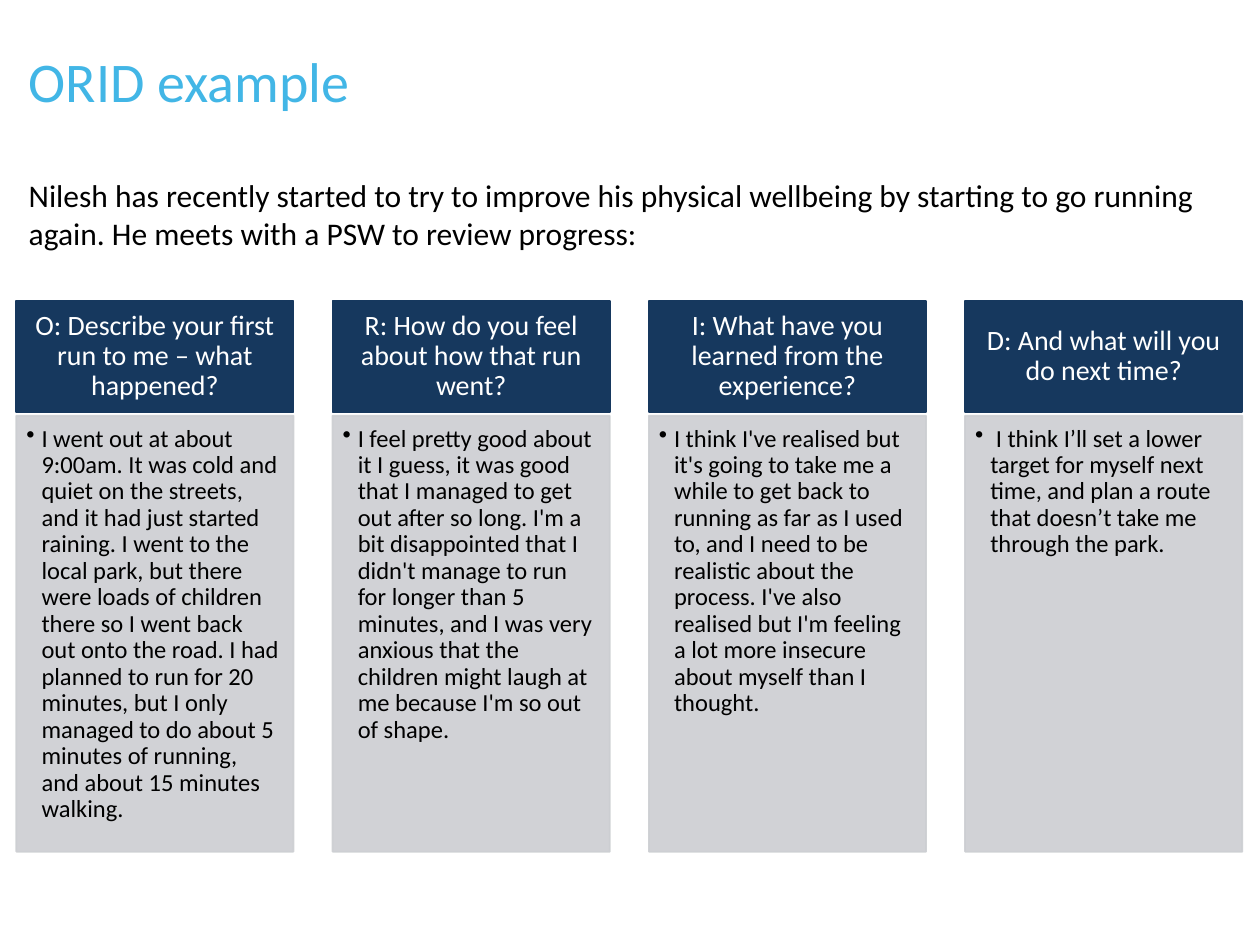
from lxml.etree import SubElement
from pptx import Presentation
from pptx.dml.color import RGBColor
from pptx.enum.shapes import MSO_SHAPE as Shape
from pptx.enum.text import MSO_ANCHOR as Anchor, PP_ALIGN as Align
from pptx.oxml.ns import qn
from pptx.util import Inches, Pt

BLUE = RGBColor(0x42, 0xB6, 0xE6)
NAVY = RGBColor(0x16, 0x38, 0x5E)
GREY = RGBColor(0xCC, 0xCE, 0xD2)
WHITE = RGBColor(0xFF, 0xFF, 0xFF)
BLACK = RGBColor(0x00, 0x00, 0x00)

# Column grid, in inches
LEFT, PITCH, WIDTH = 0.13, 2.51, 2.2
HEADER_TOP, HEADER_HEIGHT = 2.39, 0.88
BODY_TOP, BODY_HEIGHT = 3.3, 3.46

COLUMNS = [
    ("O: Describe your first run to me – what happened?",
     "I went out at about 9:00am. It was cold and quiet on the streets, and it "
     "had just started raining. I went to the local park, but there were loads "
     "of children there so I went back out onto the road. I had planned to run "
     "for 20 minutes, but I only managed to do about 5 minutes of running, and "
     "about 15 minutes walking."),
    ("R: How do you feel about how that run went?",
     "I feel pretty good about it I guess, it was good that I managed to get "
     "out after so long. I'm a bit disappointed that I didn't manage to run for "
     "longer than 5 minutes, and I was very anxious that the children might "
     "laugh at me because I'm so out of shape."),
    ("I: What have you learned from the experience?",
     "I think I've realised but it's going to take me a while to get back to "
     "running as far as I used to, and I need to be realistic about the "
     "process. I've also realised but I'm feeling a lot more insecure about "
     "myself than I thought."),
    ("D: And what will you do next time?",
     " I think I’ll set a lower target for myself next time, and plan a route "
     "that doesn’t take me through the park."),
]


class SlideBuilder:
    font_name = "Calibri"

    def __init__(self, slide):
        self.slide = slide

    def set_text(self, shape, text, size, color, align=Align.LEFT, spacing=0.9,
                 anchor=Anchor.TOP, margins=(0.1, 0.05, 0.1, 0.05), bullet=False):
        frame = shape.text_frame
        frame.word_wrap = True
        frame.vertical_anchor = anchor
        (frame.margin_left, frame.margin_top,
         frame.margin_right, frame.margin_bottom) = map(Inches, margins)
        paragraph = frame.paragraphs[0]
        paragraph.text = text
        paragraph.alignment = align
        paragraph.line_spacing = spacing
        if bullet:
            properties = paragraph._p.get_or_add_pPr()
            properties.set("marL", str(Inches(0.12)))
            properties.set("indent", str(-Inches(0.12)))
            SubElement(properties, qn("a:buChar"), char="•")
        paragraph.font.name = self.font_name
        paragraph.font.size = Pt(size)
        paragraph.font.color.rgb = color

    def text(self, left, top, width, height, text, size, color, **style):
        box = self.slide.shapes.add_textbox(*map(Inches, (left, top, width, height)))
        self.set_text(box, text, size, color, **style)

    def panel(self, left, top, width, height, color, text, size, text_color,
              opacity=100, **style):
        shape = self.slide.shapes.add_shape(
            Shape.RECTANGLE, *map(Inches, (left, top, width, height)))
        shape.shadow.inherit = False
        shape.fill.solid()
        shape.fill.fore_color.rgb = color
        shape.line.color.rgb = color
        shape.line.width = Pt(1)
        if opacity < 100:
            for tint in shape._element.spPr.iter(qn("a:srgbClr")):
                SubElement(tint, qn("a:alpha"), val=str(opacity * 1000))
        self.set_text(shape, text, size, text_color, **style)


def main():
    presentation = Presentation()
    presentation.slide_width = Inches(10)
    presentation.slide_height = Inches(7.5)
    builder = SlideBuilder(
        presentation.slides.add_slide(presentation.slide_layouts[6]))

    # Title and introduction
    builder.text(LEFT, 0.38, 9.06, 1.03, "ORID example", 32, BLUE)
    builder.text(LEFT, 1.35, 9.73, 0.71,
                 "Nilesh has recently started to try to improve his physical "
                 "wellbeing by starting to go running again. He meets with a "
                 "PSW to review progress:", 18, BLACK, spacing=1.0)

    # Question and answer columns
    for index, (question, answer) in enumerate(COLUMNS):
        left = LEFT + index * PITCH
        builder.panel(left, HEADER_TOP, WIDTH, HEADER_HEIGHT, NAVY,
                      question, 16, WHITE, align=Align.CENTER,
                      anchor=Anchor.MIDDLE, margins=(0.12, 0.07, 0.12, 0.07))
        builder.panel(left, BODY_TOP, WIDTH, BODY_HEIGHT, GREY,
                      answer, 14, BLACK, opacity=90, bullet=True,
                      margins=(0.08, 0.08, 0.11, 0.12))

    presentation.save("out.pptx")


if __name__ == "__main__":
    main()
